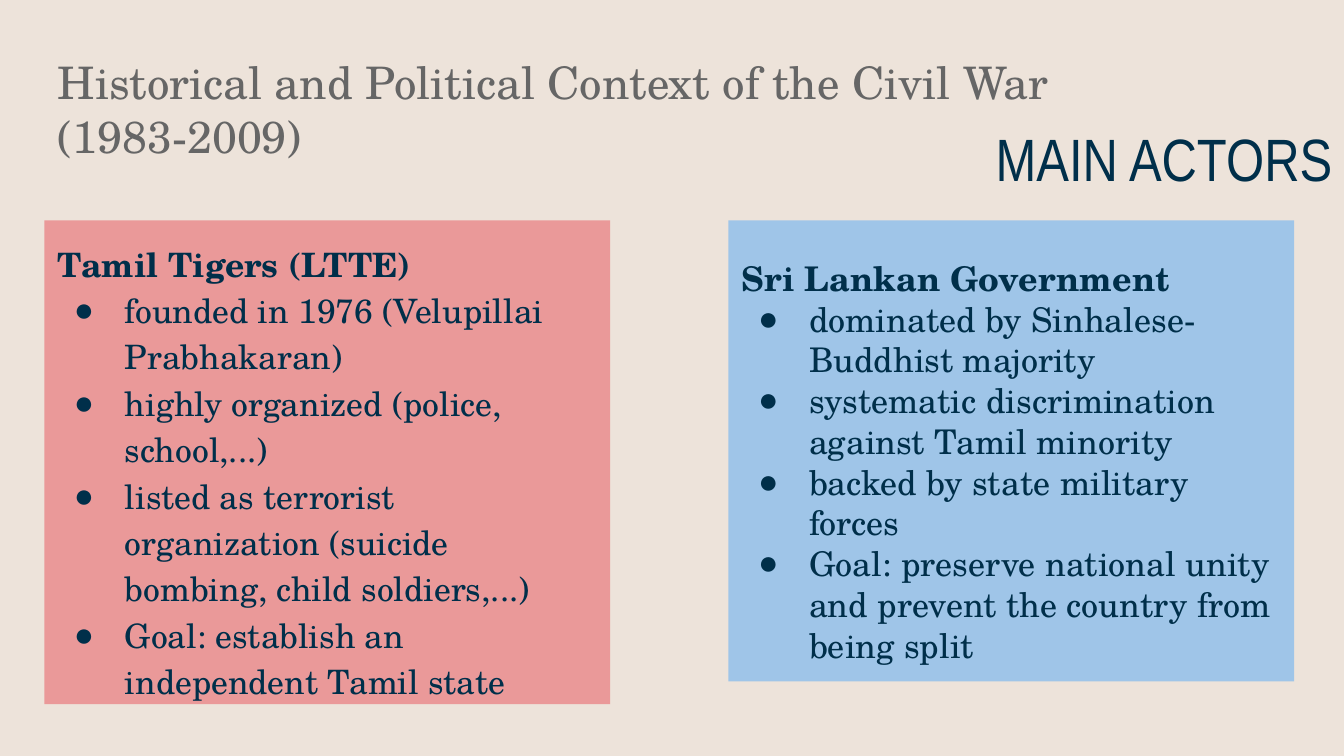
"""Build the slide on the main actors of the Sri Lankan civil war."""
import lxml.etree
import pptx
import pptx.dml.color
import pptx.enum.text
import pptx.oxml.ns
import pptx.util

Inches, Pt, qn = pptx.util.Inches, pptx.util.Pt, pptx.oxml.ns.qn
ANCHOR = pptx.enum.text.MSO_ANCHOR
COLORS = {"background": "EDE3DA", "navy": "002F4A", "gray": "666666", "red": "EA9999", "blue": "9FC5E8"}
SERIF, SANS = "TeX Gyre Schola", "Arial Narrow"
TITLE = "Historical and Political Context of the Civil War (1983-2009)"
LABEL = "MAIN ACTORS"
ACTORS = [
    {
        "name": "Tamil Tigers (LTTE)",
        "points": [
            "founded in 1976 (Velupillai Prabhakaran)",
            "highly organized (police, school,...)",
            "listed as terrorist organization (suicide bombing, child soldiers,...)",
            "Goal: establish an independent Tamil state",
        ],
        "fill": "red", "height": 3.6, "size": 18, "spacing": 1.15,
    },
    {
        "name": "Sri Lankan Government",
        "points": [
            "dominated by Sinhalese-Buddhist majority",
            "systematic discrimination against Tamil minority",
            "backed by state military forces",
            "Goal: preserve national unity and prevent the country from being split",
        ],
        "fill": "blue", "height": 3.43, "size": 18.2, "spacing": 1.0,
    },
]
SLIDE_WIDTH = 10
SLIDE_HEIGHT = SLIDE_WIDTH * 9 / 16
LEFT, PANEL_TOP, PANEL_WIDTH, PANEL_PITCH = 0.33, 1.64, 4.21, 5.09
INDENT, HANGING = 0.5, -0.38


def rgb(name):
    return pptx.dml.color.RGBColor.from_string(COLORS[name])


def place(sp, left, top, width, height):
    sp.left, sp.top, sp.width, sp.height = map(Inches, (left, top, width, height))


def setup_frame(tf, anchor):
    tf.word_wrap = True
    tf.auto_size = pptx.enum.text.MSO_AUTO_SIZE.NONE
    tf.vertical_anchor = anchor
    tf.margin_left = tf.margin_right = tf.margin_top = tf.margin_bottom = Inches(0.1)


def style(p, font, size, color, bold=False, spacing=1.0):
    p.alignment = pptx.enum.text.PP_ALIGN.LEFT
    p.line_spacing = spacing
    p.space_before = p.space_after = Pt(0)
    for r in p.runs:
        r.font.name, r.font.size, r.font.bold = font, Pt(size), bold
        r.font.color.rgb = rgb(color)


def set_bullet(p, bulleted):
    pPr = p._p.get_or_add_pPr()
    pPr.set("marL", str(Inches(INDENT if bulleted else 0)))
    pPr.set("indent", str(Inches(HANGING if bulleted else 0)))
    if bulleted:
        color = lxml.etree.SubElement(pPr, qn("a:buClr"))
        lxml.etree.SubElement(color, qn("a:srgbClr"), val=COLORS["navy"])
        lxml.etree.SubElement(pPr, qn("a:buChar"), char="●")
    else:
        lxml.etree.SubElement(pPr, qn("a:buNone"))


def fill_panel(sp, actor):
    sp.fill.solid()
    sp.fill.fore_color.rgb = rgb(actor["fill"])
    tf = sp.text_frame
    setup_frame(tf, ANCHOR.MIDDLE)
    tf.text = "\n".join([actor["name"], *actor["points"]])
    for i, p in enumerate(tf.paragraphs):
        heading = i == 0
        style(p, SERIF, actor["size"], "navy", heading, 1.5 if heading else actor["spacing"])
        set_bullet(p, not heading)


def add_line(sp, text, font, size, color):
    tf = sp.text_frame
    setup_frame(tf, ANCHOR.TOP)
    tf.text = text
    style(tf.paragraphs[0], font, size, color)


def main():
    prs = pptx.Presentation()
    prs.slide_width, prs.slide_height = Inches(SLIDE_WIDTH), Inches(SLIDE_HEIGHT)
    s = prs.slides.add_slide(prs.slide_layouts[3])
    s.background.fill.solid()
    s.background.fill.fore_color.rgb = rgb("background")

    title, *panels = list(s.placeholders)[:3]
    place(title, LEFT, 0.31, 8.01, 1.01)
    add_line(title, TITLE, SERIF, 24, "gray")
    for i, (sp, actor) in enumerate(zip(panels, ACTORS)):
        place(sp, LEFT + i * PANEL_PITCH, PANEL_TOP, PANEL_WIDTH, actor["height"])
        fill_panel(sp, actor)

    label = s.shapes.add_textbox(Inches(7.31), Inches(0.81), Inches(2.82), Inches(0.74))
    add_line(label, LABEL, SANS, 32, "navy")
    prs.save("out.pptx")


if __name__ == "__main__":
    main()
